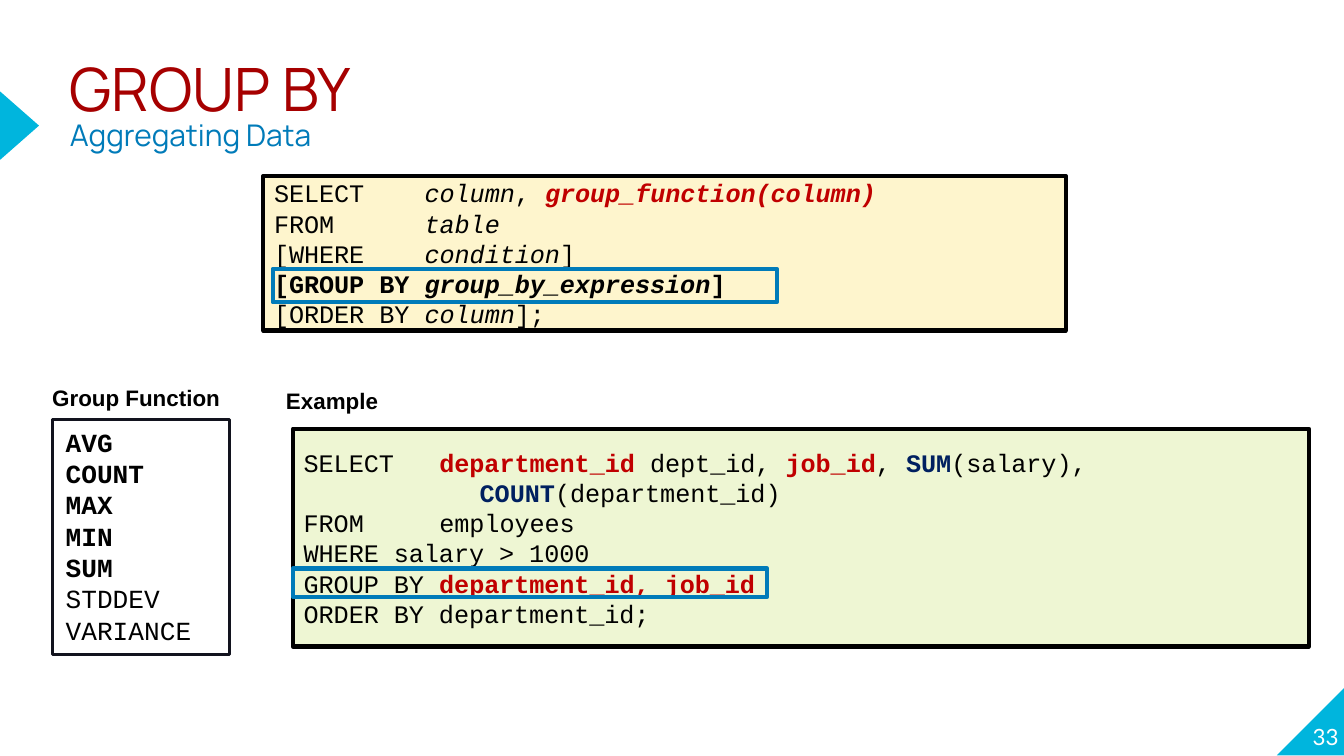
"""Build the slide on GROUP BY and aggregating data."""
from lxml import etree
from pptx import Presentation
from pptx.dml.color import RGBColor
from pptx.enum import shapes, text
from pptx.oxml import ns
from pptx.util import Inches, Pt

BLACK = RGBColor(0x00, 0x00, 0x00)
WHITE = RGBColor(0xFF, 0xFF, 0xFF)
CYAN = RGBColor(0x00, 0xB5, 0xDD)
BLUE = RGBColor(0x00, 0x7B, 0xB9)
NAVY = RGBColor(0x00, 0x20, 0x60)
INK = RGBColor(0x12, 0x13, 0x1E)
DARK_RED = RGBColor(0xA6, 0x00, 0x00)
RED = RGBColor(0xC0, 0x00, 0x00)
CREAM = RGBColor(0xFE, 0xF5, 0xCD)
GREEN = RGBColor(0xEE, 0xF6, 0xD3)

PLAIN = {}
ITALIC = {"italic": True}
BOLD = {"bold": True}
BOLD_ITALIC = {"bold": True, "italic": True}
RED_BOLD = {"bold": True, "color": RED}
RED_BOLD_ITALIC = {"bold": True, "italic": True, "color": RED}
NAVY_BOLD = {"bold": True, "color": NAVY}


def add_box(kind, place, fill=None, line=None, width=2.25):
    box = slide.shapes.add_shape(kind, *map(Inches, place))
    box.shadow.inherit = False
    if fill is None:
        box.fill.background()
    else:
        box.fill.solid()
        box.fill.fore_color.rgb = fill
    if line is None:
        box.line.fill.background()
    else:
        box.line.color.rgb = line
        box.line.width = Pt(width)
    return box


def write(frame, lines, font, size, color=BLACK, align=text.PP_ALIGN.LEFT):
    for number, runs in enumerate(lines):
        paragraph = frame.add_paragraph() if number else frame.paragraphs[0]
        paragraph.alignment = align
        paragraph.font.name = font
        paragraph.font.size = Pt(size)
        paragraph.font.color.rgb = color
        for words, style in runs:
            run = paragraph.add_run()
            run.text = words
            run.font.bold = style.get("bold")
            run.font.italic = style.get("italic")
            if "color" in style:
                run.font.color.rgb = style["color"]


presentation = Presentation()
presentation.slide_width = Inches(10)
presentation.slide_height = Inches(10) * 9 // 16
slide = presentation.slides.add_slide(presentation.slide_layouts[6])

corner = add_box(shapes.MSO_SHAPE.RIGHT_TRIANGLE, (9.5, 5.11, 0.51, 0.51), CYAN)
corner.rotation = 270
pointer = add_box(shapes.MSO_SHAPE.ISOSCELES_TRIANGLE, (-0.11, 0.79, 0.51, 0.29), CYAN)
pointer.rotation = 90

heading = slide.shapes.add_textbox(Inches(0.52), Inches(0.49), Inches(6.17), Inches(0.35)).text_frame
page_number = slide.shapes.add_textbox(Inches(9.46), Inches(5.07), Inches(0.5), Inches(0.51)).text_frame
for frame in (heading, page_number):
    frame.word_wrap = True
    frame.margin_left = frame.margin_right = frame.margin_top = frame.margin_bottom = 0

title = heading.paragraphs[0]
title.line_spacing = 0.8
title.font.name = "Manrope"
for words, size, color in (("GROUP BY", 32, DARK_RED), ("Aggregating Data", 16, BLUE)):
    if title.runs:
        title.add_line_break()
    run = title.add_run()
    run.text = words
    run.font.size = Pt(size)
    run.font.color.rgb = color

page_number.vertical_anchor = text.MSO_ANCHOR.BOTTOM
write(page_number, [[("33", PLAIN)]], "Lato", 12, WHITE, text.PP_ALIGN.RIGHT)

syntax = [
    [("SELECT\t", PLAIN), ("column", ITALIC), (", ", PLAIN), ("group_function(column)", RED_BOLD_ITALIC)],
    [("FROM\t", PLAIN), ("table", ITALIC)],
    [("[WHERE\t", PLAIN), ("condition", ITALIC), ("]", PLAIN)],
    [("[GROUP BY ", BOLD), ("group_by_expression", BOLD_ITALIC), ("]", BOLD)],
    [("[ORDER BY ", PLAIN), ("column", ITALIC), ("];", PLAIN)],
]
example = [
    [("SELECT\t", PLAIN), ("department_id ", RED_BOLD), ("dept_id, ", PLAIN), ("job_id", RED_BOLD),
     (", ", PLAIN), ("SUM", NAVY_BOLD), ("(salary),", PLAIN)],
    [("\t", PLAIN), ("COUNT", NAVY_BOLD), ("(department_id)", PLAIN)],
    [("FROM\temployees", PLAIN)],
    [("WHERE salary > 1000", PLAIN)],
    [("GROUP BY ", PLAIN), ("department_id, job_id", RED_BOLD)],
    [("ORDER BY department_id;", PLAIN)],
]
queries = (
    (syntax, (1.96, 1.31, 5.97, 1.15), CREAM, 1.12, (2.03, 2, 3.75, 0.25)),
    (example, (2.18, 3.19, 7.56, 1.62), GREEN, 1.01, (2.18, 4.23, 3.53, 0.21)),
)
for lines, place, fill, column_stop, highlight in queries:
    query = add_box(shapes.MSO_SHAPE.RECTANGLE, place, fill, BLACK).text_frame
    query.word_wrap = False
    query.vertical_anchor = text.MSO_ANCHOR.MIDDLE
    query.margin_left = query.margin_right = Inches(0.08)
    query.margin_top = query.margin_bottom = Inches(0.04)
    write(query, lines, "Courier New", 13.5)
    for paragraph in query.paragraphs:
        if "\t" in paragraph.text:
            stop = 1.31 if paragraph.text.startswith("\t") else column_stop
            tabs = etree.Element(ns.qn("a:tabLst"))
            etree.SubElement(tabs, ns.qn("a:tab"), pos=str(Inches(stop)), algn="l")
            paragraph.font._element.addprevious(tabs)
    add_box(shapes.MSO_SHAPE.RECTANGLE, highlight, line=BLUE)

functions = add_box(shapes.MSO_SHAPE.RECTANGLE, (0.39, 3.12, 1.32, 1.75), line=INK, width=1.5).text_frame
functions.vertical_anchor = text.MSO_ANCHOR.TOP
common = [[(name, BOLD)] for name in ("AVG", "COUNT", "MAX", "MIN", "SUM")]
statistical = [[(name, PLAIN)] for name in ("STDDEV", "VARIANCE")]
write(functions, common + statistical, "Courier New", 14)

for caption, left, top in (("Group Function", 0.29, 2.81), ("Example", 2.03, 2.83)):
    label = slide.shapes.add_textbox(Inches(left), Inches(top), Inches(5.03), Inches(0.3)).text_frame
    label.word_wrap = True
    write(label, [[(caption, BOLD)]], "Arial", 12)

presentation.save("out.pptx")
